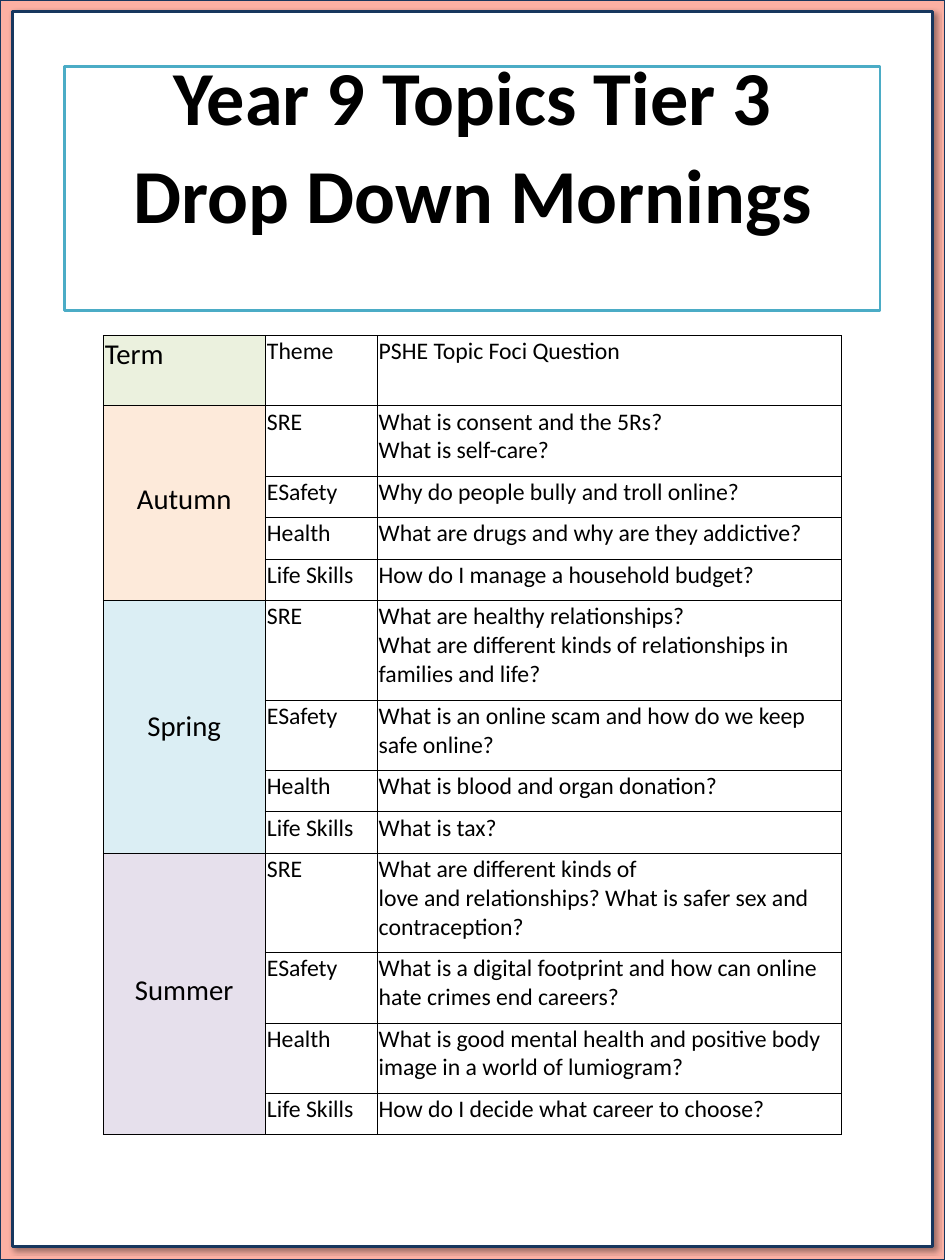
from lxml import etree
from pptx import Presentation
from pptx.dml.color import RGBColor
from pptx.enum.shapes import MSO_SHAPE
from pptx.enum.text import MSO_ANCHOR, PP_ALIGN
from pptx.oxml import parse_xml
from pptx.oxml.ns import nsdecls, qn
from pptx.util import Pt

RECTANGLE = MSO_SHAPE.RECTANGLE
TOP, MIDDLE = MSO_ANCHOR.TOP, MSO_ANCHOR.MIDDLE
LEFT, CENTER = PP_ALIGN.LEFT, PP_ALIGN.CENTER

FONT = "Calibri"
BLACK, WHITE, NAVY, CORAL, TEAL = "000000", "FFFFFF", "17375E", "FCB0A3", "4BACC6"
PAGE_WIDTH, PAGE_HEIGHT = 756, 1008
TITLE_LINES = ["Year 9 Topics Tier 3", "Drop Down Mornings"]
HEADINGS = ["Term", "Theme", "PSHE Topic Foci Question"]
HEADING_FILL = "EBF1DE"
COLUMN_WIDTHS = [129.6, 89.4, 371.4]
CELL_MARGINS = (1.4, 1.4, 1.4, 6.5)
NO_MARGINS = (0, 0, 0, 0)
THEMES = ["SRE", "ESafety", "Health", "Life Skills"]
NO_BREAK_SPACE = chr(160)
LOVE_PHRASE = NO_BREAK_SPACE.join(["love", "and", "relationships?"])
# Each term: name, fill, margins of its cell, and one (questions, line count) pair per theme.
TERMS = [
    ("Autumn", "FDEADA", CELL_MARGINS, [
        (["What is consent and the 5Rs?", "What is self-care?"], 2),
        (["Why do people bully and troll online?"], 1),
        (["What are drugs and why are they addictive?"], 1),
        (["How do I manage a household budget?"], 1),
    ]),
    ("Spring", "DBEEF4", NO_MARGINS, [
        (["What are healthy relationships?",
          "What are different kinds of relationships in families and life?"], 3),
        (["What is an online scam and how do we keep safe online?"], 2),
        (["What is blood and organ donation?"], 1),
        (["What is tax?"], 1),
    ]),
    ("Summer", "E6E0EC", CELL_MARGINS, [
        ([f"What are different kinds of {LOVE_PHRASE} "
          "What is safer sex and contraception?"], 3),
        (["What is a digital footprint and how can online hate crimes end careers?"], 2),
        (["What is good mental health and positive body image "
          "in a world of lumiogram?"], 2),
        (["How do I decide what career to choose?"], 1),
    ]),
]


def color(value):
    return RGBColor.from_string(value)


def set_all(target, values):
    for name, value in values.items():
        setattr(target, name, value)


def write_lines(frame, lines, size, bold=False, **para_format):
    for index, line in enumerate(lines):
        para = frame.add_paragraph() if index else frame.paragraphs[0]
        set_all(para, para_format)
        span = para.add_run()
        span.text = line
        set_all(span.font, {"name": FONT, "size": Pt(size), "bold": bold})
        span.font.color.rgb = color(BLACK)


def add_panel(page, box, fill, line, line_width):
    panel = page.shapes.add_shape(RECTANGLE, *map(Pt, box))
    panel.shadow.inherit = False
    panel.fill.solid()
    panel.fill.fore_color.rgb = color(fill)
    panel.line.color.rgb = color(line)
    panel.line.width = Pt(line_width)
    return panel


def add_drop_shadow(panel):
    effects = panel._element.spPr.find(qn("a:effectLst"))
    effects.append(parse_xml(
        f'<a:outerShdw {nsdecls("a")} blurRad="{Pt(4)}" dist="{Pt(3)}" dir="2700000" '
        f'algn="tl" rotWithShape="0"><a:srgbClr val="{BLACK}">'
        '<a:alpha val="40000"/></a:srgbClr></a:outerShdw>'))


def add_frame(page, box):
    left, top, width, height = box
    add_panel(page, box, CORAL, NAVY, 2.25)
    margin = 10
    sheet = (left + margin, top + margin - 0.6, width - 2 * margin, height - 2 * margin)
    add_drop_shadow(add_panel(page, sheet, WHITE, NAVY, 2.25))


def add_title(page, box):
    """Place the title; its tight line height lets the first line sit on the top edge."""
    frame = add_panel(page, box, WHITE, TEAL, 2).text_frame
    set_all(frame, {"word_wrap": True, "vertical_anchor": TOP, "margin_top": 0})
    write_lines(frame, TITLE_LINES, 61, bold=True, alignment=CENTER,
                line_spacing=Pt(59), space_after=Pt(20))


def add_borders(cell):
    properties = cell._tc.get_or_add_tcPr()
    for index, side in enumerate(("lnL", "lnR", "lnT", "lnB")):
        border = etree.Element(qn(f"a:{side}"), w=str(Pt(0.75)))
        fill = etree.SubElement(border, qn("a:solidFill"))
        etree.SubElement(fill, qn("a:srgbClr"), val=BLACK)
        properties.insert(index, border)


def fill_cell(cell, lines, size=19, fill=WHITE, anchor=TOP, align=LEFT,
              margins=CELL_MARGINS):
    for side, margin in zip(("left", "right", "top", "bottom"), margins):
        setattr(cell, f"margin_{side}", Pt(margin))
    cell.vertical_anchor = anchor
    cell.fill.solid()
    cell.fill.fore_color.rgb = color(fill)
    write_lines(cell.text_frame, lines, size, alignment=align)


def add_topics(page, box):
    line_counts = [2] + [count for *_, topics in TERMS for _, count in topics]
    table = page.shapes.add_table(len(line_counts), len(HEADINGS), *map(Pt, box)).table
    set_all(table, {"first_row": False, "horz_banding": False})
    for column, width in zip(table.columns, COLUMN_WIDTHS):
        column.width = Pt(width)
    for row, count in zip(table.rows, line_counts):
        row.height = Pt(10.1 + 23.1 * count)

    fill_cell(table.cell(0, 0), HEADINGS[:1], size=23, fill=HEADING_FILL)
    for column, heading in enumerate(HEADINGS[1:], 1):
        fill_cell(table.cell(0, column), [heading])

    for term_index, (term, fill, margins, topics) in enumerate(TERMS):
        first = 1 + term_index * len(THEMES)
        term_cell = table.cell(first, 0)
        term_cell.merge(table.cell(first + len(THEMES) - 1, 0))
        fill_cell(term_cell, [term], size=23, fill=fill, anchor=MIDDLE, align=CENTER,
                  margins=margins)
        for row, (theme, (questions, _)) in enumerate(zip(THEMES, topics), first):
            fill_cell(table.cell(row, 1), [theme])
            fill_cell(table.cell(row, 2), questions)

    for cell in table.iter_cells():
        add_borders(cell)


def main():
    deck = Presentation()
    set_all(deck, {"slide_width": Pt(PAGE_WIDTH), "slide_height": Pt(PAGE_HEIGHT)})
    page = deck.slides.add_slide(deck.slide_layouts[6])
    add_frame(page, (0, 0, PAGE_WIDTH, PAGE_HEIGHT))
    add_title(page, (51.8, 53.3, 652.4, 195))
    add_topics(page, (82.6, 268.4, sum(COLUMN_WIDTHS), 639))
    deck.save("out.pptx")


if __name__ == "__main__":
    main()
